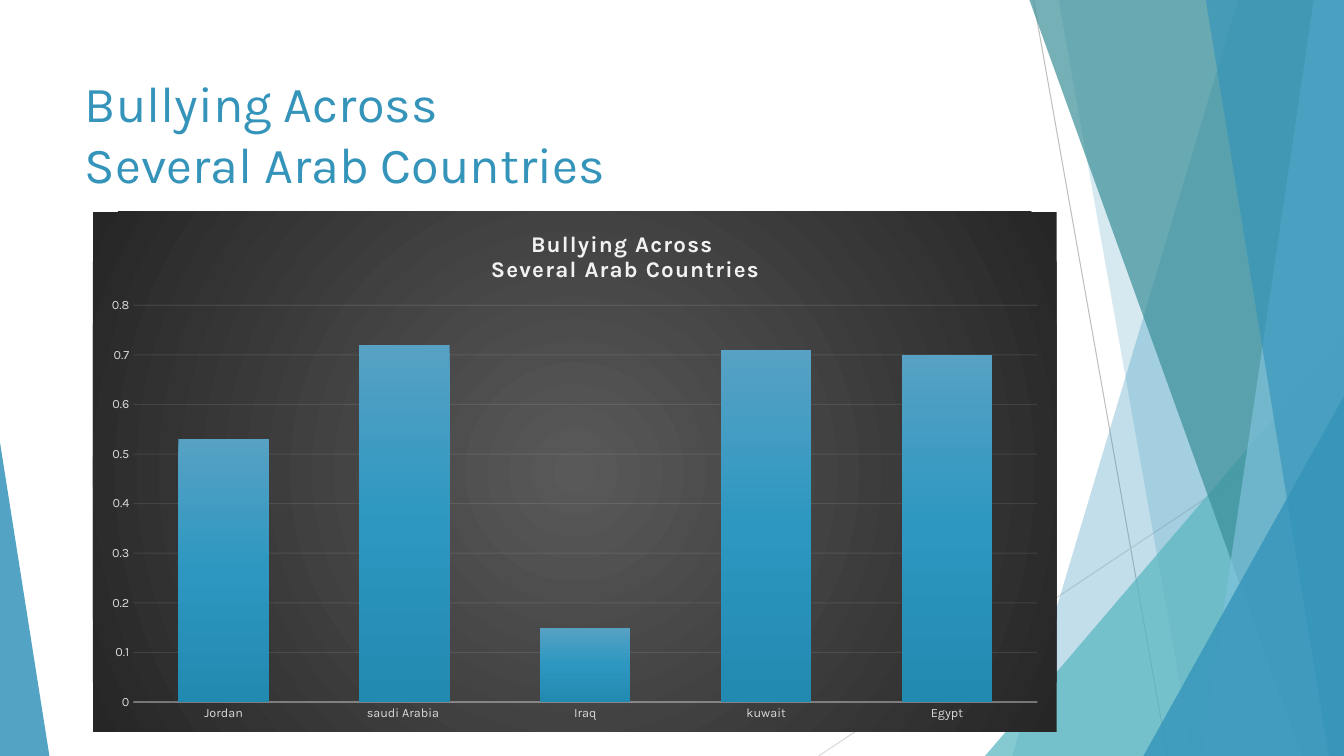
from lxml import etree
from pptx import Presentation
from pptx.chart.data import CategoryChartData
from pptx.dml.color import RGBColor
from pptx.enum.chart import XL_CHART_TYPE, XL_TICK_MARK
from pptx.enum.shapes import MSO_CONNECTOR, MSO_SHAPE
from pptx.enum.text import MSO_ANCHOR, MSO_AUTO_SIZE, PP_ALIGN
from pptx.oxml import parse_xml
from pptx.oxml.ns import nsdecls, qn
from pptx.util import Inches, Pt

COLUMNS = XL_CHART_TYPE.COLUMN_CLUSTERED
NO_TICK = XL_TICK_MARK.NONE
STRAIGHT = MSO_CONNECTOR.STRAIGHT
TRIANGLE = MSO_SHAPE.ISOSCELES_TRIANGLE
FONT = "Karla"
BLUE, TEAL, DARK_TEAL, SKY = "3494BA", "58B6C0", "3A8F98", "7FC1DB"
WIDTH, HEIGHT = 13.33, 7.5

RATES = {"Jordan": 0.53, "saudi Arabia ": 0.72, "Iraq": 0.15, "kuwait": 0.71, "Egypt": 0.7}


def rgb(code):
    return RGBColor.from_string(code)


def style_font(font, size, color, bold=False):
    font.name, font.size, font.bold = FONT, Pt(size), bold
    font.color.rgb = rgb(color)


def set_alpha(fill_parent, percent):
    color = next(fill_parent.iter(qn("a:srgbClr")))
    etree.SubElement(color, qn("a:alpha")).set("val", str(percent * 1000))


def gradient(stops, direction):
    marks = "".join(
        f'<a:gs pos="{pos * 1000}"><a:srgbClr val="{color}"/></a:gs>' for pos, color in stops)
    return f'<a:gradFill rotWithShape="1"><a:gsLst>{marks}</a:gsLst>{direction}</a:gradFill>'


def paint(shape, color, alpha):
    shape.shadow.inherit = False
    shape.fill.solid()
    shape.fill.fore_color.rgb = rgb(color)
    set_alpha(shape.fill._xPr.find(qn("a:solidFill")), alpha)
    shape.line.fill.background()


def add_hairline(page, start, end, color):
    line = page.shapes.add_connector(STRAIGHT, *map(Inches, start + end))
    line.line.color.rgb = rgb(color)
    line.line.width = Pt(0.75)
    etree.SubElement(line._element.spPr, qn("a:effectLst"))


def add_band(page, top_x, bottom_x, color, alpha):
    """Full-height panel from a slanted left edge to the right slide edge."""
    corners = [(WIDTH, 0), (WIDTH, HEIGHT), (bottom_x, HEIGHT)]
    builder = page.shapes.build_freeform(Inches(top_x), 0)
    builder.add_line_segments([(Inches(x), Inches(y)) for x, y in corners])
    paint(builder.convert_to_shape(), color, alpha)


def add_corner(page, left, top, width, apex, color, alpha):
    """Right triangle standing on the bottom slide edge."""
    corner = page.shapes.add_shape(
        TRIANGLE, *map(Inches, (left, top, width, HEIGHT - top)))
    corner.adjustments[0] = apex
    paint(corner, color, alpha)


def add_backdrop(page):
    add_hairline(page, (10.25, 0), (11.58, HEIGHT), "BFBFBF")
    add_hairline(page, (WIDTH, 4.03), (8.12, HEIGHT), "D9D9D9")
    add_band(page, 12.28, 10.04, BLUE, 30)
    add_band(page, 10.5, 11.83, BLUE, 20)
    add_corner(page, 9.77, 3.33, 3.56, 1, TEAL, 72)
    add_band(page, 10.21, 12.91, DARK_TEAL, 70)
    add_band(page, 13.03, 11.92, SKY, 70)
    add_band(page, 11.96, 13.18, BLUE, 65)
    add_corner(page, 11.34, 3.93, 1.99, 1, BLUE, 80)
    add_corner(page, 0, 4.39, 0.49, 0, BLUE, 85)


def place_title(page, box):
    title = page.shapes.title
    title.left, title.top, title.width, title.height = map(Inches, box)
    frame = title.text_frame
    frame.auto_size = MSO_AUTO_SIZE.NONE
    frame.vertical_anchor = MSO_ANCHOR.TOP
    frame.word_wrap = True
    para = frame.paragraphs[0]
    para.text = "Bullying Across \vSeveral Arab Countries"
    para.alignment = PP_ALIGN.LEFT
    style_font(para.font, 36, BLUE)


def layout_xml(inner, **fractions):
    target = '<c:layoutTarget val="inner"/>' if inner else ""
    modes = '<c:xMode val="edge"/><c:yMode val="edge"/>'
    values = "".join(f'<c:{key} val="{value}"/>' for key, value in fractions.items())
    return parse_xml(f'<c:layout {nsdecls("c")}><c:manualLayout>{target}{modes}{values}'
                     '</c:manualLayout></c:layout>')


def set_layout(parent, layout, position):
    for old in parent.findall(qn("c:layout")):
        parent.remove(old)
    parent.insert(position, layout)


def fill_gradient(properties, xml):
    fill = parse_xml(xml.replace("<a:gradFill", f'<a:gradFill {nsdecls("a")}', 1))
    properties.insert(0, fill)


def title_chart(chart):
    frame = chart.chart_title.text_frame
    frame.text = "Bullying Across \nSeveral Arab Countries"
    for para in frame.paragraphs:
        style_font(para.font, 16, "F2F2F2", bold=True)
        for span in para.runs:
            style_font(span.font, 16, "F2F2F2", bold=True)
            span._r.get_or_add_rPr().set("spc", "100")
    chart.chart_title.include_in_layout = False
    set_layout(chart.chart_title._element, layout_xml(False, x=0.41, y=0.03), 1)


def style_axes(chart):
    for axis in (chart.category_axis, chart.value_axis):
        axis.major_tick_mark = axis.minor_tick_mark = NO_TICK
        style_font(axis.tick_labels.font, 9, "D9D9D9")
    base = chart.category_axis.format.line
    base.color.rgb, base.width = rgb("F2F2F2"), Pt(1)
    set_alpha(base._ln, 54)
    values = chart.value_axis
    values.minimum_scale, values.maximum_scale, values.major_unit = 0, 0.8, 0.1
    values.format.line.fill.background()
    values.tick_labels.number_format = "General"
    values.tick_labels.number_format_is_linked = False
    grid = values.major_gridlines.format.line
    grid.color.rgb, grid.width = rgb("F2F2F2"), Pt(0.75)
    set_alpha(grid._ln, 10)


def add_rate_chart(page, box):
    data = CategoryChartData()
    data.categories = list(RATES)
    data.add_series("Series 1", list(RATES.values()))
    chart = page.shapes.add_chart(COLUMNS, *map(Inches, box), data).chart
    chart.has_legend = False
    style_font(chart.font, 10, "000000")
    title_chart(chart)
    style_axes(chart)

    # Columns
    plot = chart.plots[0]
    plot.gap_width, plot.overlap, plot.vary_by_categories = 100, -24, False
    columns = plot.series[0]
    columns.invert_if_negative = False
    fill_gradient(columns.format.fill._xPr, gradient(
        [(0, "56A1C4"), (50, "2D97C1"), (100, "2289B1")], '<a:lin ang="5400000" scaled="0"/>'))

    # Plot area and dark panel
    space = chart._chartSpace
    set_layout(space.chart.plotArea, layout_xml(True, x=0.042, y=0.18, w=0.938, h=0.763), 0)
    panel = parse_xml(f'<c:spPr {nsdecls("c", "a")}><a:ln><a:noFill/></a:ln></c:spPr>')
    fill_gradient(panel, gradient(
        [(0, "595959"), (100, "262626")],
        '<a:path path="circle"><a:fillToRect l="50000" t="50000" r="50000" b="50000"/></a:path>'))
    space.chart.addnext(panel)


def main():
    deck = Presentation()
    deck.slide_width, deck.slide_height = Inches(WIDTH), Inches(HEIGHT)
    page = deck.slides.add_slide(deck.slide_layouts[5])
    add_backdrop(page)
    place_title(page, (0.74, 0.67, 9.4, 1.44))
    add_rate_chart(page, (0.92, 2.1, 9.56, 5.16))
    deck.save("out.pptx")


if __name__ == "__main__":
    main()
